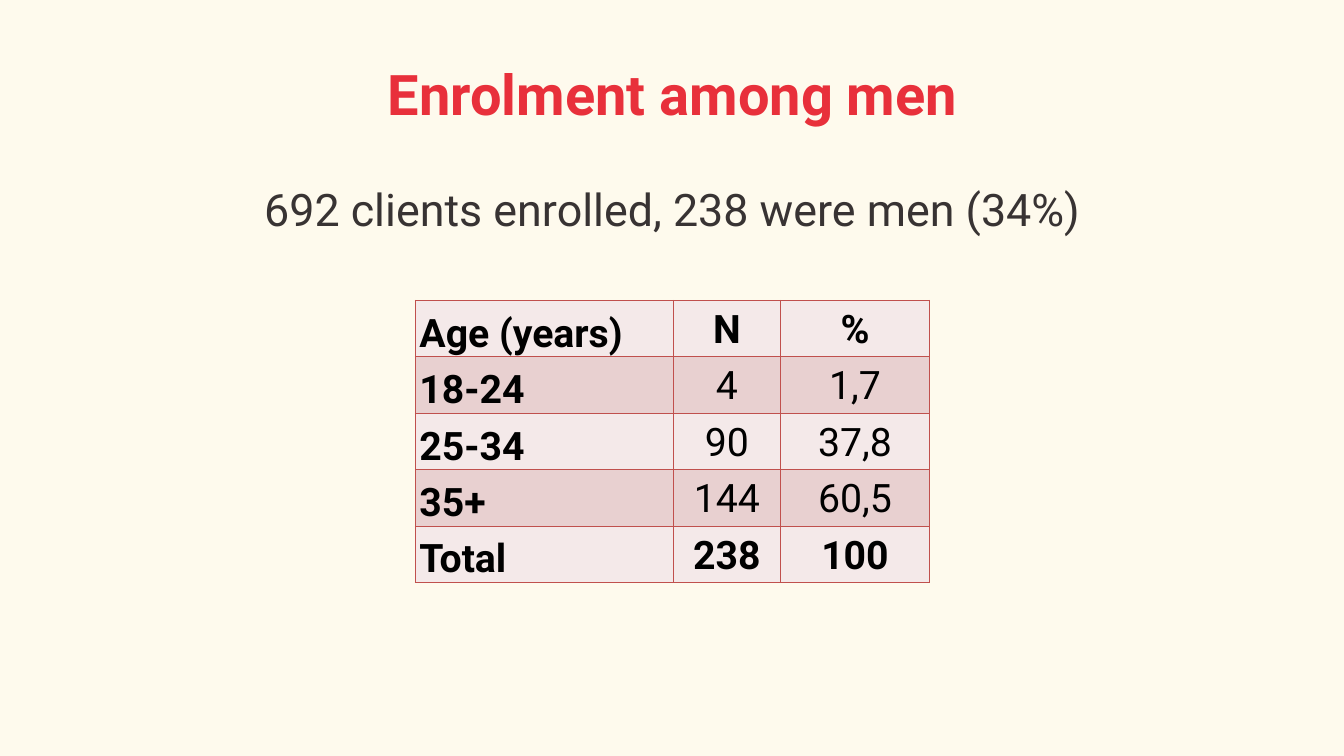
from lxml.etree import SubElement
from pptx import Presentation
from pptx.dml.color import RGBColor
from pptx.enum.shapes import MSO_SHAPE as Shape
from pptx.enum.text import MSO_ANCHOR as Anchor, PP_ALIGN as Align
from pptx.oxml import parse_xml
from pptx.oxml.ns import nsdecls, qn
from pptx.util import Inches, Pt

FONT = "Roboto"
CREAM = RGBColor(0xFE, 0xF3, 0xD4)
RED = RGBColor(0xE8, 0x30, 0x3B)
GREY = RGBColor(0x38, 0x33, 0x33)
BLACK = RGBColor(0, 0, 0)
BRICK = RGBColor(0xC0, 0x50, 0x4D)
BANDS = RGBColor(0xF4, 0xE9, 0xE9), RGBColor(0xE8, 0xD0, 0xD0)

WIDTHS = 2.56, 1.06, 1.48
ROW = 0.56
AGES = [
    ("Age (years)", "N", "%"),
    ("18-24", "4", "1,7"),
    ("25-34", "90", "37,8"),
    ("35+", "144", "60,5"),
    ("Total", "238", "100"),
]


def style(para, size, color, bold=False, align=Align.CENTER):
    para.alignment = align
    font = para.font
    font.name, font.size, font.bold = FONT, Pt(size), bold
    font.color.rgb = color


def add_wash(slide, width, height):
    """Cover the slide with a translucent tint."""
    wash = slide.shapes.add_shape(Shape.RECTANGLE, 0, 0, width, height)
    wash.shadow.inherit = False
    wash.line.fill.background()
    wash.fill.solid()
    wash.fill.fore_color.rgb = CREAM
    tint = wash.fill._xPr.find(".//" + qn("a:srgbClr"))
    SubElement(tint, qn("a:alpha"), val="40000")


def add_text(slide, text, top, height, size, color, bold=False, anchor=Anchor.TOP):
    box = slide.shapes.add_textbox(Inches(0.67), Inches(top), Inches(12), Inches(height))
    frame = box.text_frame
    frame.word_wrap = True
    frame.vertical_anchor = anchor
    frame.text = text
    style(frame.paragraphs[0], size, color, bold)


def add_edges(cell):
    """Draw all four borders; they go before the fill."""
    props = cell._tc.get_or_add_tcPr()
    for spot, side in enumerate(("lnL", "lnR", "lnT", "lnB")):
        edge = parse_xml(
            f'<a:{side} {nsdecls("a")} w="12700"><a:solidFill>'
            f'<a:srgbClr val="{BRICK}"/></a:solidFill></a:{side}>'
        )
        props.insert(spot, edge)


def fill_cell(cell, text, band, bold, label):
    cell.margin_left = cell.margin_right = Inches(0.04)
    cell.margin_top = cell.margin_bottom = 0
    cell.vertical_anchor = Anchor.BOTTOM if label else Anchor.MIDDLE
    cell.fill.solid()
    cell.fill.fore_color.rgb = band
    add_edges(cell)
    cell.text = text
    para = cell.text_frame.paragraphs[0]
    para.line_spacing = 1.07
    style(para, 28, BLACK, bold, Align.LEFT if label else Align.CENTER)


def add_ages(slide, left, top):
    count = len(AGES)
    table = slide.shapes.add_table(
        count, len(WIDTHS), Inches(left), Inches(top),
        Inches(sum(WIDTHS)), Inches(ROW * count),
    ).table
    for col, width in zip(table.columns, WIDTHS):
        col.width = Inches(width)
    for r, values in enumerate(AGES):
        table.rows[r].height = Inches(ROW)
        for c, value in enumerate(values):
            # Labels, header and total are bold
            bold = c == 0 or r in (0, count - 1)
            fill_cell(table.cell(r, c), value, BANDS[r % 2], bold, c == 0)


def main():
    deck = Presentation()
    deck.slide_width, deck.slide_height = Inches(13.33), Inches(7.5)
    slide = deck.slides.add_slide(deck.slide_layouts[6])

    # Background
    add_wash(slide, deck.slide_width, deck.slide_height)

    # Title and summary
    add_text(slide, "Enrolment among men", 0.3, 1.25, 40, RED, True, Anchor.MIDDLE)
    add_text(slide, "692 clients enrolled, 238 were men (34%)", 1.75, 4.95, 32, GREY)

    # Age table
    add_ages(slide, 4.12, 2.98)

    deck.save("out.pptx")


if __name__ == "__main__":
    main()
